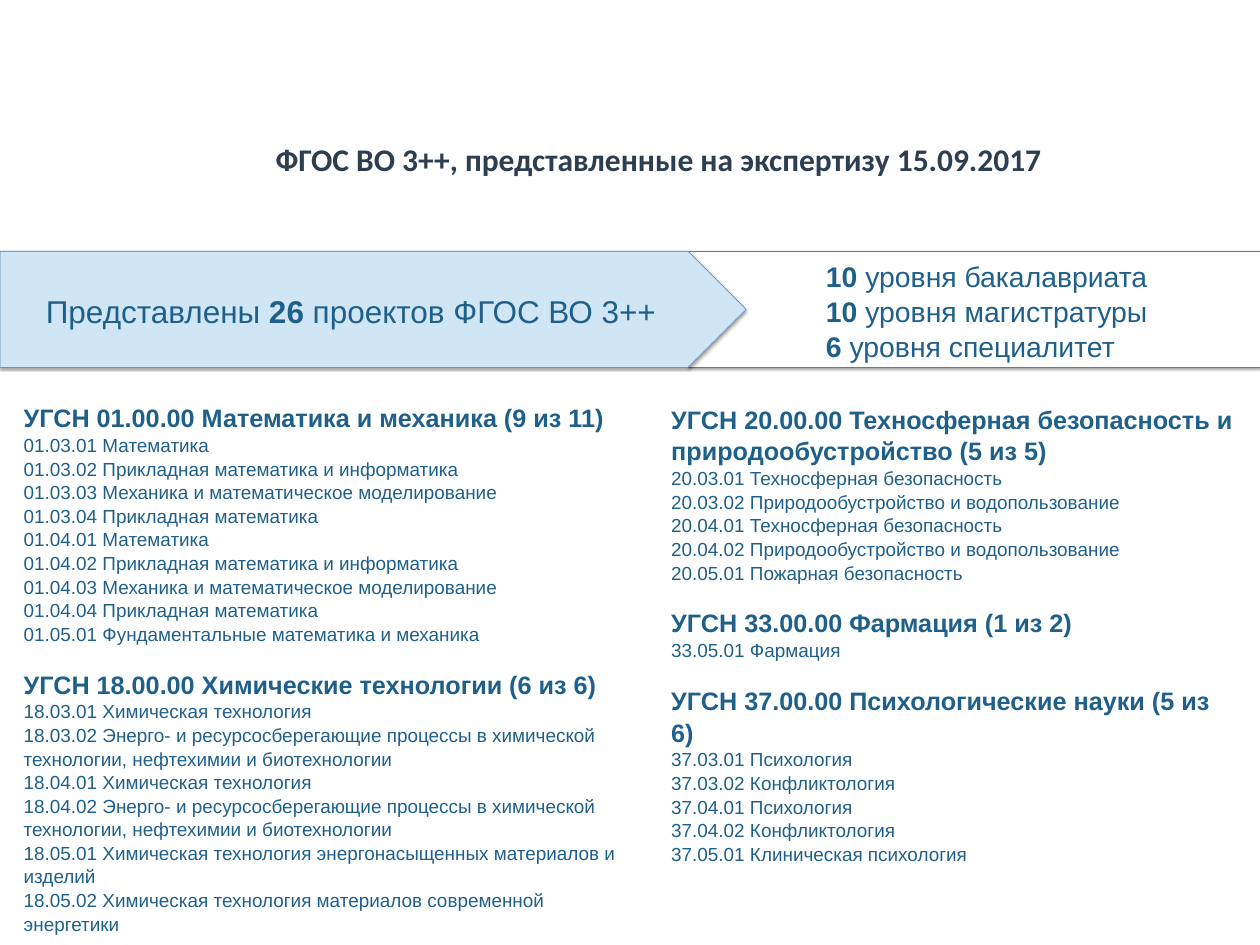
"""Builds a slide on the draft education standards submitted for expert review."""
from lxml import etree
from pptx import Presentation
from pptx.dml.color import RGBColor
from pptx.enum.shapes import MSO_SHAPE
from pptx.enum.text import MSO_ANCHOR, MSO_AUTO_SIZE, PP_ALIGN
from pptx.oxml.ns import qn
from pptx.util import Pt

RECTANGLE, PENTAGON = MSO_SHAPE.RECTANGLE, MSO_SHAPE.PENTAGON
MIDDLE, LEFT = MSO_ANCHOR.MIDDLE, PP_ALIGN.LEFT
NO_FIT, GROW = MSO_AUTO_SIZE.NONE, MSO_AUTO_SIZE.SHAPE_TO_FIT_TEXT
TEXT_BLUE = "1F608B"
HEADING_SIZE, PROGRAMME_SIZE, GROUP_GAP = 32, 24, 28.8


def color(hex_value):
    return RGBColor.from_string(hex_value)


def add_text(box, lines):
    """Fills a box with lines of (space before, [(text, size, bold), ...])."""
    frame = box.text_frame
    frame.word_wrap = True
    frame.auto_size = GROW
    for index, (gap, pieces) in enumerate(lines):
        paragraph = frame.paragraphs[0] if index == 0 else frame.add_paragraph()
        paragraph.line_spacing = 1.04
        if gap:
            paragraph.space_before = Pt(gap)
        for text, size, bold in pieces:
            run = paragraph.add_run()
            run.text = text
            run.font.color.rgb = color(TEXT_BLUE)
            for name, value in {"name": "Arial", "size": Pt(size), "bold": bold}.items():
                setattr(run.font, name, value)


mathematics = [
    "01.03.01 Математика",
    "01.03.02 Прикладная математика и информатика",
    "01.03.03 Механика и математическое моделирование",
    "01.03.04 Прикладная математика",
    "01.04.01 Математика",
    "01.04.02 Прикладная математика и информатика",
    "01.04.03 Механика и математическое моделирование",
    "01.04.04 Прикладная математика",
    "01.05.01 Фундаментальные математика и механика",
]
chemistry = [
    "18.03.01 Химическая технология",
    "18.03.02 Энерго- и ресурсосберегающие процессы в химической технологии, нефтехимии и биотехнологии",
    "18.04.01 Химическая технология",
    "18.04.02 Энерго- и ресурсосберегающие процессы в химической технологии, нефтехимии и биотехнологии",
    "18.05.01 Химическая технология энергонасыщенных материалов и изделий",
    "18.05.02 Химическая технология материалов современной энергетики",
]
safety = [
    "20.03.01 Техносферная безопасность",
    "20.03.02 Природообустройство и водопользование",
    "20.04.01 Техносферная безопасность",
    "20.04.02 Природообустройство и водопользование",
    "20.05.01 Пожарная безопасность",
]
psychology = [
    "37.03.01 Психология",
    "37.03.02 Конфликтология",
    "37.04.01 Психология",
    "37.04.02 Конфликтология",
    "37.05.01 Клиническая психология",
]
columns = [
    ((23, 506.2, 776.9, 666.7), [
        ("УГСН 01.00.00 Математика и механика (9 из 11)", mathematics),
        ("УГСН 18.00.00 Химические технологии (6 из 6)", chemistry),
    ]),
    ((845.3, 508.3, 734.4, 540.7), [
        ("УГСН 20.00.00 Техносферная безопасность и природообустройство (5 из 5)", safety),
        ("УГСН 33.00.00 Фармация (1 из 2)", ["33.05.01 Фармация"]),
        ("УГСН 37.00.00 Психологические науки (5 из 6)", psychology),
    ]),
]

prs = Presentation()
prs.slide_width, prs.slide_height = Pt(1600), Pt(1200)
slide = prs.slides.add_slide(prs.slide_layouts[5])
shapes = slide.shapes

title = shapes.title
title_place = {"left": 334.1, "top": 97.2, "width": 1185.8, "height": 208.8}
for name, value in title_place.items():
    setattr(title, name, Pt(value))
title_frame = title.text_frame
title_margins = {"margin_left": 16, "margin_top": 8, "margin_right": 16, "margin_bottom": 8}
for name, value in title_margins.items():
    setattr(title_frame, name, Pt(value))
title_frame.text = "ФГОС ВО 3++, представленные на экспертизу 15.09.2017"
title_frame.word_wrap = True
title_frame.auto_size = NO_FIT
title_frame.vertical_anchor = MIDDLE
title_line = title_frame.paragraphs[0]
title_line.alignment = LEFT
for name, value in {"name": "Calibri", "size": Pt(40), "bold": True}.items():
    setattr(title_line.font, name, value)
title_line.font.color.rgb = color("2C3E50")

banner_parts = [
    (RECTANGLE, 873.4, 726.6, "FFFFFF"),
    (PENTAGON, 0, 947.5, "D1E6F5"),
]
for preset, left, width, fill in banner_parts:
    banner = shapes.add_shape(preset, Pt(left), Pt(319), Pt(width), Pt(147.6))
    banner.fill.solid()
    banner.fill.fore_color.rgb = color(fill)
    banner.line.color.rgb = color("4B7EBC")
    banner.line.width = Pt(0.75)
    banner.shadow.inherit = False
    effects = banner.element.spPr.find(qn("a:effectLst"))
    shadow = etree.SubElement(effects, qn("a:outerShdw"), blurRad=str(Pt(3.1)),
                              dist=str(Pt(1.8)), dir="5400000", rotWithShape="0")
    shade = etree.SubElement(shadow, qn("a:srgbClr"), val="000000")
    etree.SubElement(shade, qn("a:alpha"), val="35000")

for place, groups in columns:
    lines = []
    for heading, programmes in groups:
        lines.append((GROUP_GAP if lines else 0, [(heading, HEADING_SIZE, True)]))
        lines += [(0, [(programme, PROGRAMME_SIZE, False)]) for programme in programmes]
    add_text(shapes.add_textbox(*map(Pt, place)), lines)

total = shapes.add_textbox(Pt(51.1), Pt(365), Pt(810.7), Pt(55.4))
add_text(total, [(0, [("Представлены ", 40, False), ("26", 40, True),
                      (" проектов ФГОС ВО 3++", 40, False)])])

level_counts = [("10 ", "бакалавриата"), ("10 ", "магистратуры"), ("6 ", "специалитет")]
levels = shapes.add_textbox(Pt(1041.8), Pt(323.3), Pt(487.4), Pt(138.2))
add_text(levels, [(0, [(count, 36, True), (f"уровня {level}", 36, False)])
                  for count, level in level_counts])

prs.save("out.pptx")
